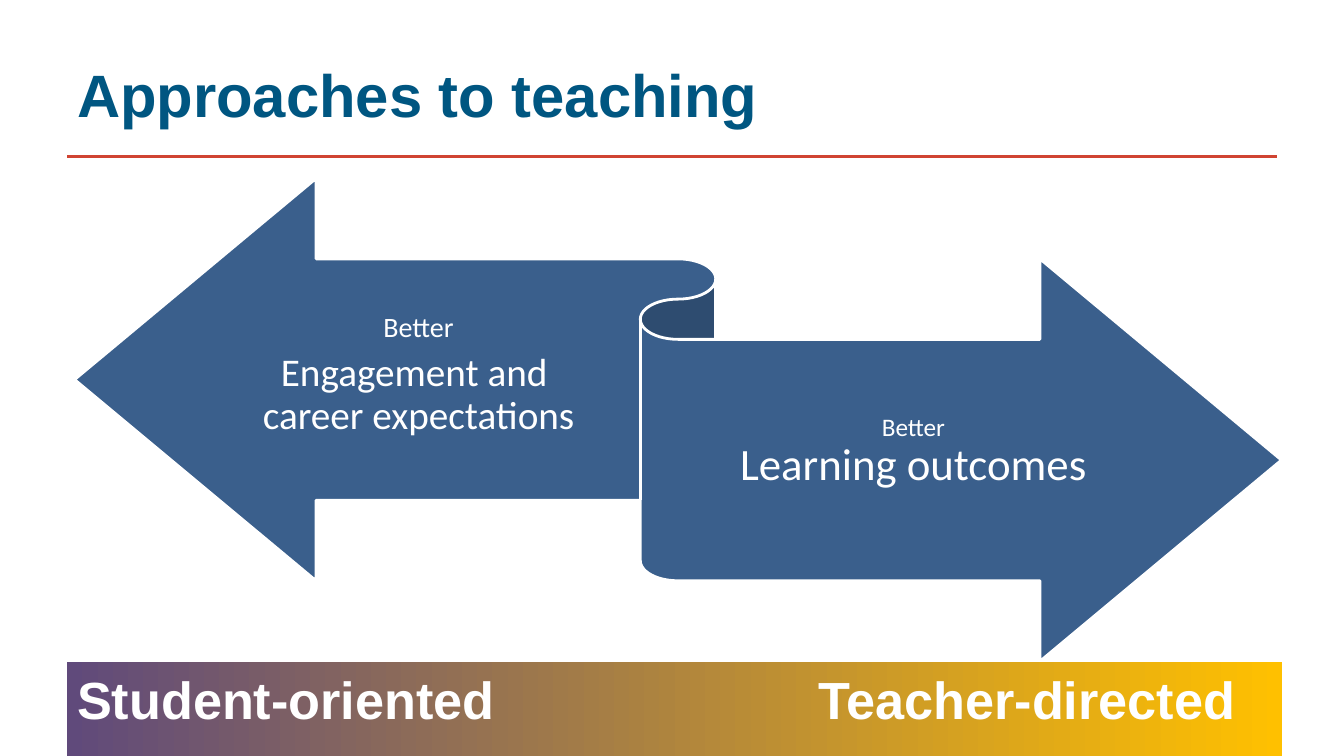
import lxml.etree
import pptx
import pptx.dml.color
import pptx.enum.shapes
import pptx.enum.text
import pptx.oxml.ns
import pptx.util

WIDTH, HEIGHT = 13.33, 7.5
COLOURS = {
    "title": "005681",
    "rule": "D04432",
    "ribbon": "3A5F8C",
    "white": "FFFFFF",
    "student": "604A7B",
    "teacher": "FFC000",
}
ANCHOR = pptx.enum.text.MSO_ANCHOR
ALIGN = pptx.enum.text.PP_ALIGN
SHAPES = pptx.enum.shapes.MSO_SHAPE


def colour(name):
    """Return the named colour."""
    return pptx.dml.color.RGBColor.from_string(COLOURS[name])


def inches(*lengths):
    """Convert lengths in inches to slide units."""
    return [pptx.util.Inches(length) for length in lengths]


def format_run(run, size, font, fill, bold=False):
    """Set the font of one run."""
    run.font.size = pptx.util.Pt(size)
    run.font.name = font
    run.font.bold = bold
    run.font.color.rgb = colour(fill)


def add_title(slide, box, text):
    """Place the title in its box, with a rule along the bottom edge."""
    left, top, width, height = box
    shape = slide.shapes.add_textbox(*inches(*box))
    frame = shape.text_frame
    frame.word_wrap = True
    frame.vertical_anchor = ANCHOR.MIDDLE
    frame.text = text
    format_run(frame.paragraphs[0].runs[0], 42.7, "Arial", "title", True)

    bottom = top + height
    rule = slide.shapes.add_connector(
        pptx.enum.shapes.MSO_CONNECTOR.STRAIGHT,
        *inches(left, bottom, left + width, bottom))
    rule.line.color.rgb = colour("rule")
    rule.line.width = pptx.util.Pt(2)
    properties = rule._element.spPr
    lxml.etree.SubElement(properties, pptx.oxml.ns.qn("a:effectLst"))


def add_label(slide, box, paragraphs):
    """Place centred paragraphs, each a text and the sizes of its runs."""
    shape = slide.shapes.add_textbox(*inches(*box))
    frame = shape.text_frame
    frame.word_wrap = True
    frame.vertical_anchor = ANCHOR.MIDDLE
    frame.margin_left = frame.margin_right = 0
    for index, (text, sizes) in enumerate(paragraphs):
        paragraph = frame.add_paragraph() if index else frame.paragraphs[0]
        paragraph.text = text
        paragraph.alignment = ALIGN.CENTER
        paragraph.line_spacing = 0.9
        paragraph.space_after = pptx.util.Pt(0.35 * sizes[-1])
        for run, size in zip(paragraph.runs, sizes):
            format_run(run, size, "Calibri", "white")


def add_ribbon(slide, box, student_label, teacher_label):
    """Place the two-way ribbon with a label on each of its arrows."""
    left, top, width, height = box
    ribbon = slide.shapes.add_shape(SHAPES.LEFT_RIGHT_RIBBON, *inches(*box))
    ribbon.shadow.inherit = False
    ribbon.fill.solid()
    ribbon.fill.fore_color.rgb = colour("ribbon")
    ribbon.line.color.rgb = colour("white")
    ribbon.line.width = pptx.util.Pt(2)

    label_width, label_height = 0.39 * width, 0.49 * height
    for across, down, label in ((0.09, 0.163, student_label),
                                (0.5, 0.322, teacher_label)):
        add_label(slide, (left + across * width, top + down * height,
                          label_width, label_height), label)


def add_scale(slide, box, student_text, teacher_text):
    """Place the gradient band that names both ends of the scale."""
    band = slide.shapes.add_shape(SHAPES.RECTANGLE, *inches(*box))
    band.shadow.inherit = False
    band.line.fill.background()
    band.fill.gradient()
    band.fill.gradient_angle = 180
    for stop, position, name in zip(band.fill.gradient_stops, (0, 1),
                                    ("teacher", "student")):
        stop.position = position
        stop.color.rgb = colour(name)

    frame = band.text_frame
    frame.word_wrap = True
    frame.vertical_anchor = ANCHOR.TOP
    frame.text = f"{student_text}\t{teacher_text}"
    paragraph = frame.paragraphs[0]
    paragraph.alignment = ALIGN.LEFT
    for run in paragraph.runs:
        format_run(run, 37.3, "Arial", "white", True)
    tabs = lxml.etree.SubElement(paragraph._p.get_or_add_pPr(),
                                 pptx.oxml.ns.qn("a:tabLst"))
    lxml.etree.SubElement(tabs, pptx.oxml.ns.qn("a:tab"),
                          pos=str(pptx.util.Inches(0.61 * box[2])), algn="l")


def build_teaching_slide(presentation):
    """Build the slide on approaches to teaching."""
    slide = presentation.slides.add_slide(presentation.slide_layouts[6])
    margin = 0.05 * WIDTH
    add_title(slide, (margin, 0.04 * HEIGHT, 0.9 * WIDTH, 1.25),
              "Approaches to teaching")
    add_ribbon(slide, (0.74, 1.77, 11.97, 4.79),
               [("Better", [20]),
                ("Engagement and \vcareer expectations", [28, 28])],
               [("Better\vLearning outcomes", [18, 32])])
    add_scale(slide, (margin, 6.57, 12.05, 1.36),
              "Student-oriented", "Teacher-directed")


def main():
    """Create and save the presentation."""
    presentation = pptx.Presentation()
    presentation.slide_width, presentation.slide_height = inches(WIDTH, HEIGHT)
    build_teaching_slide(presentation)
    presentation.save("out.pptx")


if __name__ == "__main__":
    main()
